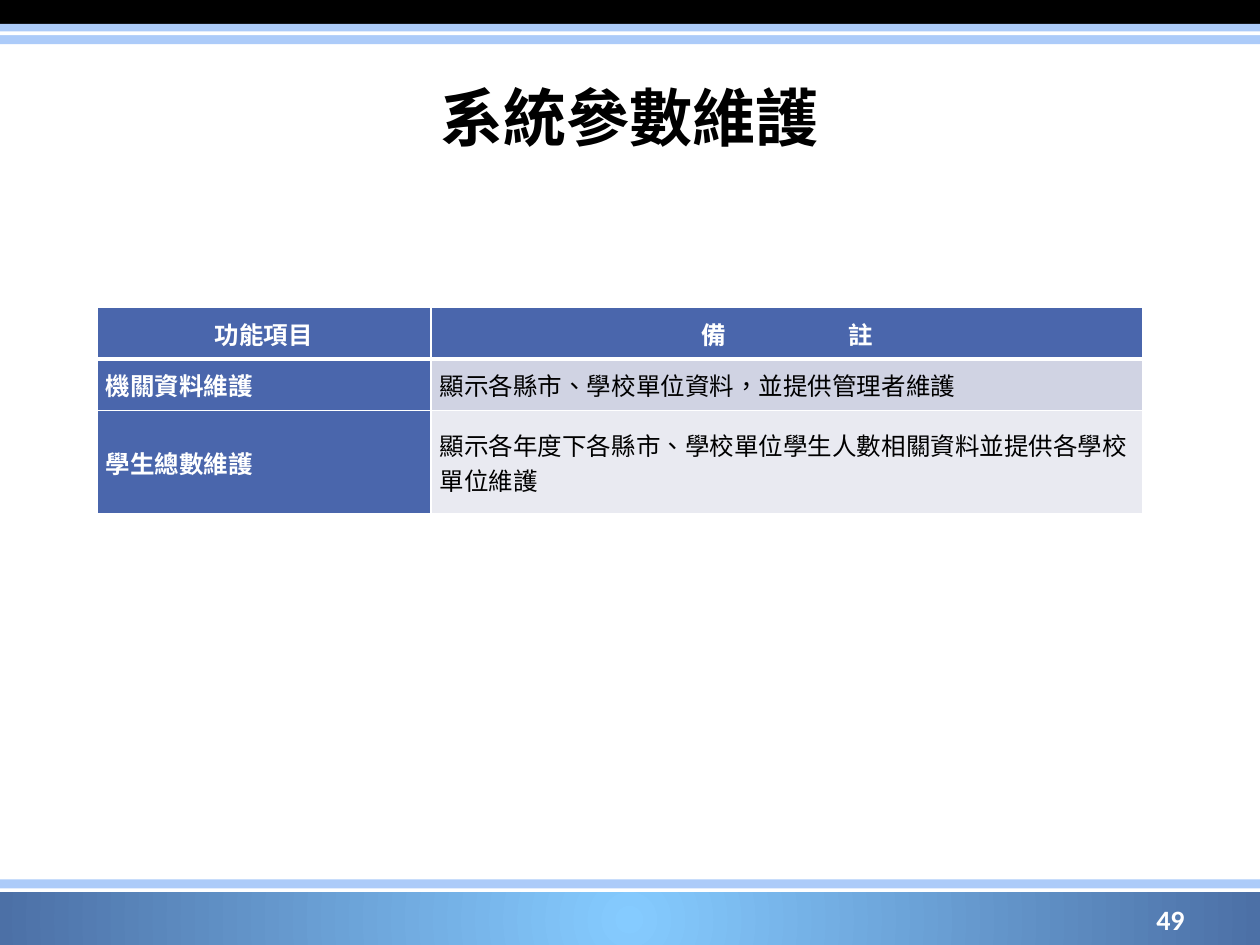
"""Build the slide on system parameter maintenance."""
from lxml.etree import SubElement
from pptx import Presentation
from pptx.dml.color import RGBColor
from pptx.enum.lang import MSO_LANGUAGE_ID
from pptx.enum.shapes import MSO_SHAPE
from pptx.enum.text import MSO_ANCHOR, PP_ALIGN
from pptx.oxml import parse_xml
from pptx.oxml.ns import nsdecls, qn
from pptx.util import Inches, Pt

COLORS = {
    "black": "000000", "white": "FFFFFF", "sky": "ACCBF9",
    "glow": "85CBFF", "steel": "4C70A6", "header": "4A66AC",
    "odd": "D0D3E3", "even": "E9EAF1",
}


def write(frame, text, size, font, color, bold, align):
    frame.vertical_anchor = MSO_ANCHOR.MIDDLE
    frame.word_wrap = True
    paragraph = frame.paragraphs[0]
    paragraph.alignment = align
    paragraph.font.size = Pt(size)
    paragraph.font.name = font
    paragraph.font.bold = bold
    paragraph.font.color.rgb = RGBColor.from_string(COLORS[color])
    for part in text.split("|"):
        run = paragraph.add_run()
        run.text = part
        run.font.language_id = MSO_LANGUAGE_ID.TRADITIONAL_CHINESE
    return paragraph


def add_border(cell, side, width):
    line = SubElement(cell._tc.get_or_add_tcPr(), qn(f"a:ln{side}"), w=str(Pt(width)))
    fill = SubElement(line, qn("a:solidFill"))
    SubElement(fill, qn("a:srgbClr"), val=COLORS["white"])


prs = Presentation()
prs.slide_width, prs.slide_height = Inches(10), Inches(7.5)
slide = prs.slides.add_slide(prs.slide_layouts[6])

bands = [
    (0, 0, 10, 0.19, "black"),
    (0, 0.19, 10, 0.16, "sky"),
    (0, 0.25, 10, 0.03, "white"),
    (-0.01, 7.07, 10.01, 0.46, "glow"),
    (-0.01, 6.98, 10.01, 0.1, "sky"),
    (-0.01, 7.05, 10.01, 0.03, "white"),
]
for left, top, width, height, color in bands:
    band = slide.shapes.add_shape(
        MSO_SHAPE.RECTANGLE, Inches(left), Inches(top), Inches(width), Inches(height))
    band.shadow.inherit = False
    band.line.fill.background()
    if color == "glow":
        band.fill.gradient()
        for stop, shade in zip(band.fill.gradient_stops, ("glow", "steel")):
            stop.color.rgb = RGBColor.from_string(COLORS[shade])
        linear = band._element.spPr.find(".//" + qn("a:lin"))
        linear.getparent().replace(linear, parse_xml(
            f'<a:path {nsdecls("a")} path="circle">'
            '<a:fillToRect l="50000" t="50000" r="50000" b="50000"/></a:path>'))
    else:
        band.fill.solid()
        band.fill.fore_color.rgb = RGBColor.from_string(COLORS[color])

title = slide.shapes.add_textbox(Inches(0.5), Inches(0.3), Inches(9), Inches(1.25))
write(title.text_frame, "系統參數維護", 36, "Karla", "black", True, PP_ALIGN.CENTER)

page_number = slide.shapes.add_textbox(Inches(7.17), Inches(7.1), Inches(2.33), Inches(0.4))
write(page_number.text_frame, "49", 16, "Calibri", "white", True, PP_ALIGN.RIGHT)

rows = [
    ("功能項目", "備|註"),
    ("機關資料維護", "顯示各縣市、學校單位資料，並提供管理者維護"),
    ("學生總數維護", "顯示各年度下各縣市、學校單位學生人數相關資料並提供各學校單位維護"),
]
functions = slide.shapes.add_table(
    len(rows), 2, Inches(0.77), Inches(2.44), Inches(8.3), Inches(1.64)).table
for column, width in zip(functions.columns, (2.65, 5.65)):
    column.width = Inches(width)
for row, height in zip(functions.rows, (0.41, 0.41, 0.82)):
    row.height = Inches(height)

for r, texts in enumerate(rows):
    for c, text in enumerate(texts):
        cell = functions.cell(r, c)
        is_heading = r == 0 or c == 0
        cell.margin_left = cell.margin_right = Inches(0.07)
        cell.margin_top = cell.margin_bottom = 0
        cell.vertical_anchor = MSO_ANCHOR.MIDDLE
        for side, width in (("L", 1), ("R", 1), ("T", 3 if r == 1 else 1), ("B", 3 if r == 0 else 1)):
            add_border(cell, side, width)
        cell.fill.solid()
        cell.fill.fore_color.rgb = RGBColor.from_string(
            COLORS["header" if is_heading else "odd" if r % 2 else "even"])
        paragraph = write(
            cell.text_frame, text, 14, "Arial", "white" if is_heading else "black",
            is_heading, PP_ALIGN.LEFT if r else PP_ALIGN.CENTER)
        paragraph.space_after = Pt(1.2)

remark_start = functions.cell(0, 1).text_frame.paragraphs[0].runs[0]
remark_start.font._element.set("spc", "7000")

prs.save("out.pptx")
